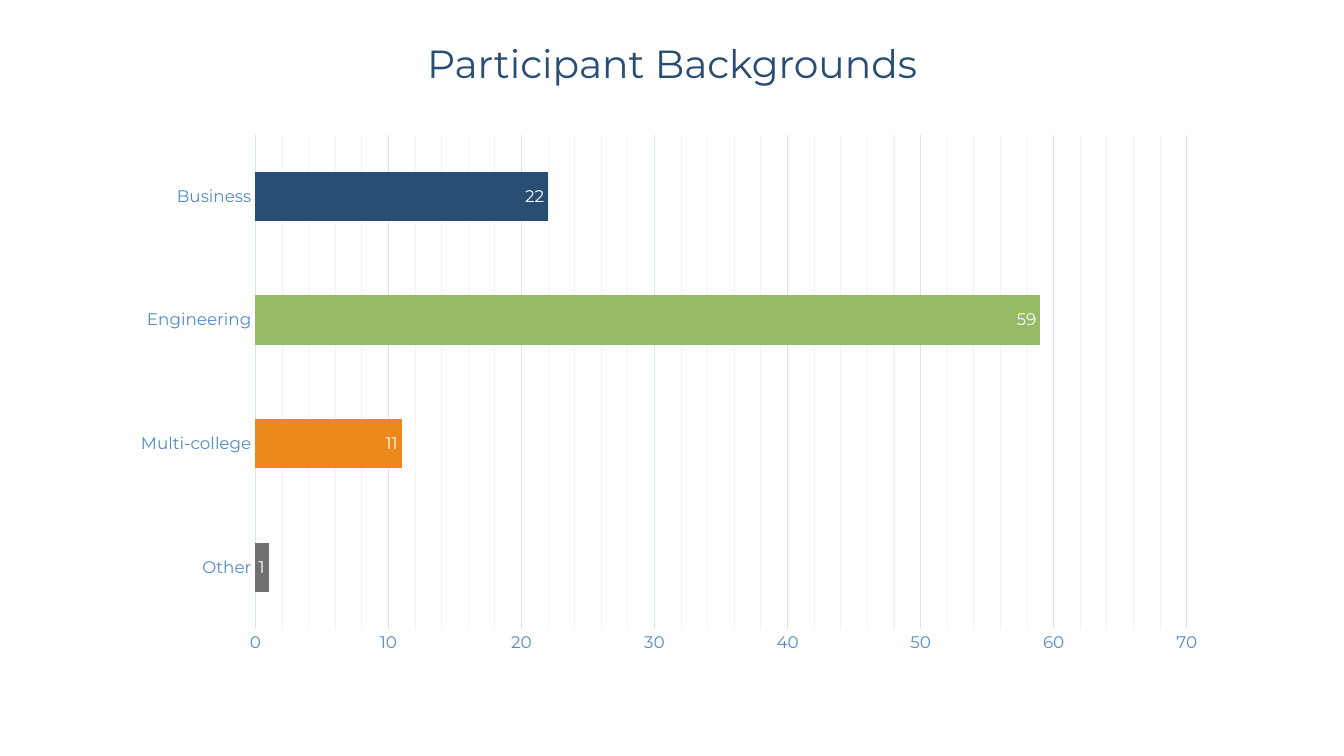
"""Build the participant backgrounds slide with a horizontal bar chart."""
from dataclasses import dataclass

import pptx
import pptx.chart.data
import pptx.dml.color
import pptx.enum.chart
import pptx.enum.text
import pptx.oxml
import pptx.oxml.ns
import pptx.util

Pt = pptx.util.Pt
FONT = "Montserrat"
COLORS = {
    "navy": "294E73",
    "green": "96BA65",
    "orange": "EB891C",
    "gray": "717171",
    "label": "558CC3",
    "grid": "D8E4F1",
    "minor": "F2F2F2",
    "white": "FFFFFF",
}


@dataclass
class Bar:
    name: str
    value: int
    color: str


BARS = [
    Bar("Other", 1, "gray"),
    Bar("Multi-college", 11, "orange"),
    Bar("Engineering", 59, "green"),
    Bar("Business", 22, "navy"),
]
PLOT_LAYOUT = {"x": 0.12, "y": 0.02, "w": 0.85, "h": 0.91}


def rgb(name: str) -> pptx.dml.color.RGBColor:
    return pptx.dml.color.RGBColor.from_string(COLORS[name])


def set_font(font, size: float, color: str) -> None:
    font.name = FONT
    font.size = Pt(size)
    font.color.rgb = rgb(color)


def set_line(line, color: str) -> None:
    line.color.rgb = rgb(color)
    line.width = Pt(0.75)


def set_plot_layout(chart) -> None:
    area = chart._chartSpace.find(".//" + pptx.oxml.ns.qn("c:plotArea"))
    for old in area.findall(pptx.oxml.ns.qn("c:layout")):
        area.remove(old)
    sizes = "".join(f'<c:{k} val="{v}"/>' for k, v in PLOT_LAYOUT.items())
    area.insert(0, pptx.oxml.parse_xml(
        f'<c:layout {pptx.oxml.ns.nsdecls("c")}><c:manualLayout>'
        '<c:layoutTarget val="inner"/><c:xMode val="edge"/><c:yMode val="edge"/>'
        f"{sizes}</c:manualLayout></c:layout>"))


def color_minor_gridlines(chart) -> None:
    grid = chart._chartSpace.find(".//" + pptx.oxml.ns.qn("c:minorGridlines"))
    grid.append(pptx.oxml.parse_xml(
        f'<c:spPr {pptx.oxml.ns.nsdecls("c", "a")}><a:ln w="{Pt(0.75)}"><a:solidFill>'
        f'<a:srgbClr val="{COLORS["minor"]}"/></a:solidFill></a:ln></c:spPr>'))


def style_axes(chart) -> None:
    cat, val = chart.category_axis, chart.value_axis
    for axis in (cat, val):
        axis.major_tick_mark = pptx.enum.chart.XL_TICK_MARK.NONE
        axis.minor_tick_mark = pptx.enum.chart.XL_TICK_MARK.NONE
        set_font(axis.tick_labels.font, 12, "label")
    set_line(cat.format.line, "grid")
    val.format.line.fill.background()
    val.minimum_scale, val.maximum_scale = 0, 70
    val.major_unit, val.minor_unit = 10, 2
    val.has_major_gridlines = val.has_minor_gridlines = True
    set_line(val.major_gridlines.format.line, "grid")
    color_minor_gridlines(chart)


def add_bars(slide, bars: list[Bar]) -> None:
    data = pptx.chart.data.CategoryChartData()
    data.categories = [bar.name for bar in bars]
    data.add_series("Series 1", [bar.value for bar in bars])
    chart = slide.shapes.add_chart(
        pptx.enum.chart.XL_CHART_TYPE.BAR_STACKED,
        Pt(88.56), Pt(88.56), Pt(782.64), Pt(388.08), data).chart
    chart.has_legend = chart.has_title = False
    set_font(chart.font, 10, "navy")
    set_plot_layout(chart)
    style_axes(chart)
    plot = chart.plots[0]
    plot.gap_width, plot.overlap = 150, 100
    plot.vary_by_categories = False
    series = plot.series[0]
    series.format.fill.solid()
    series.format.fill.fore_color.rgb = rgb("navy")
    for i, bar in enumerate(bars):
        if bar.color != "navy":
            fill = series.points[i].format.fill
            fill.solid()
            fill.fore_color.rgb = rgb(bar.color)
    labels = series.data_labels
    labels.show_value = True
    labels.position = pptx.enum.chart.XL_LABEL_POSITION.INSIDE_END
    set_font(labels.font, 12, "white")


def add_title(slide, text: str) -> None:
    sp = slide.shapes.add_textbox(Pt(240), Pt(24.5), Pt(480), Pt(41))
    tf = sp.text_frame
    tf.word_wrap = True
    tf.auto_size = pptx.enum.text.MSO_AUTO_SIZE.SHAPE_TO_FIT_TEXT
    p = tf.paragraphs[0]
    p.text = text
    p.alignment = pptx.enum.text.PP_ALIGN.CENTER
    set_font(p.font, 28, "navy")


def main() -> None:
    prs = pptx.Presentation()
    prs.slide_width, prs.slide_height = Pt(960), Pt(540)
    s = prs.slides.add_slide(prs.slide_layouts[6])
    add_bars(s, BARS)
    add_title(s, "Participant Backgrounds")
    prs.save("out.pptx")


if __name__ == "__main__":
    main()
